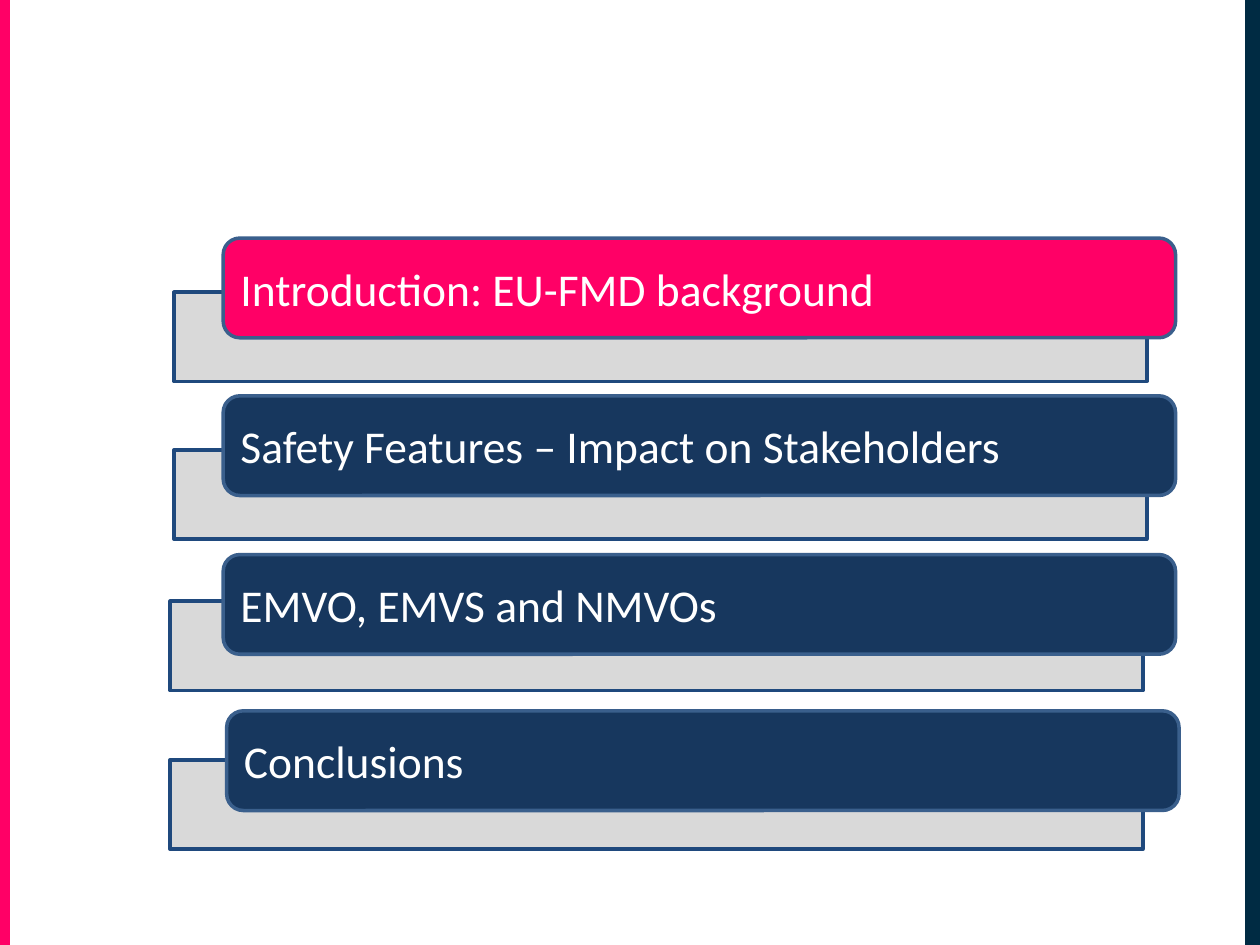
from pptx import Presentation
from pptx import util as u
from pptx.dml.color import RGBColor
from pptx.enum import shapes, text

COLOURS = {
    "pink": "FF0066",
    "dark": "002B43",
    "navy": "17375E",
    "grey": "D9D9D9",
    "white": "FFFFFF",
    "ledge_line": "1F497D",
    "bar_line": "3A5F8C",
}
WIDTH, HEIGHT = 25.4, 19.05
LEDGE_SIZE = (19.61, 1.8)
BAR_SIZE = (19.2, 2.01)
AGENDA = [
    ("Introduction: EU-FMD background", "pink", (3.51, 5.89), (4.5, 4.8)),
    ("Safety Features – Impact on Stakeholders", "navy", (3.51, 9.07), (4.5, 7.98)),
    ("EMVO, EMVS and NMVOs", "navy", (3.43, 12.12), (4.5, 11.18)),
    ("Conclusions", "navy", (3.43, 15.32), (4.57, 14.33)),
]


def colour(name):
    return RGBColor.from_string(COLOURS[name])


def write_text(shape, content, size=26, font="Calibri", fill="white",
               align=text.PP_ALIGN.LEFT, anchor=text.MSO_ANCHOR.MIDDLE):
    frame = shape.text_frame
    frame.word_wrap = True
    frame.vertical_anchor = anchor
    paragraph = frame.paragraphs[0]
    paragraph.alignment = align
    run = paragraph.add_run()
    run.text = content
    run.font.size = u.Pt(size)
    run.font.name = font
    run.font.color.rgb = colour(fill)


class AgendaSlide:
    """Holds the line style and the current slide of the agenda."""

    line_width = u.Pt(2)

    def __init__(self, presentation):
        self.slide = presentation.slides.add_slide(presentation.slide_layouts[6])

    def block(self, kind, position, size, fill, line=None):
        shape = self.slide.shapes.add_shape(
            kind, *(u.Cm(length) for length in (*position, *size)))
        shape.shadow.inherit = False
        shape.fill.solid()
        shape.fill.fore_color.rgb = colour(fill)
        if line:
            shape.line.color.rgb = colour(line)
            shape.line.width = self.line_width
        else:
            shape.line.fill.background()
        return shape

    def stripe(self, left, width, fill):
        self.block(shapes.MSO_SHAPE.RECTANGLE, (left, 0), (width, HEIGHT), fill)

    def ledge(self, position):
        self.block(shapes.MSO_SHAPE.RECTANGLE, position, LEDGE_SIZE, "grey", "ledge_line")

    def bar(self, position, content, fill):
        shape = self.block(shapes.MSO_SHAPE.ROUNDED_RECTANGLE, position, BAR_SIZE,
                           fill, "bar_line")
        write_text(shape, content)


def main():
    presentation = Presentation()
    presentation.slide_width = u.Cm(WIDTH)
    presentation.slide_height = u.Cm(HEIGHT)
    agenda = AgendaSlide(presentation)
    agenda.stripe(0, 0.2, "pink")
    agenda.stripe(WIDTH - 0.3, 0.3, "dark")
    for content, fill, ledge_position, bar_position in AGENDA:
        agenda.ledge(ledge_position)
        agenda.bar(bar_position, content, fill)
    presentation.save("out.pptx")


if __name__ == "__main__":
    main()
